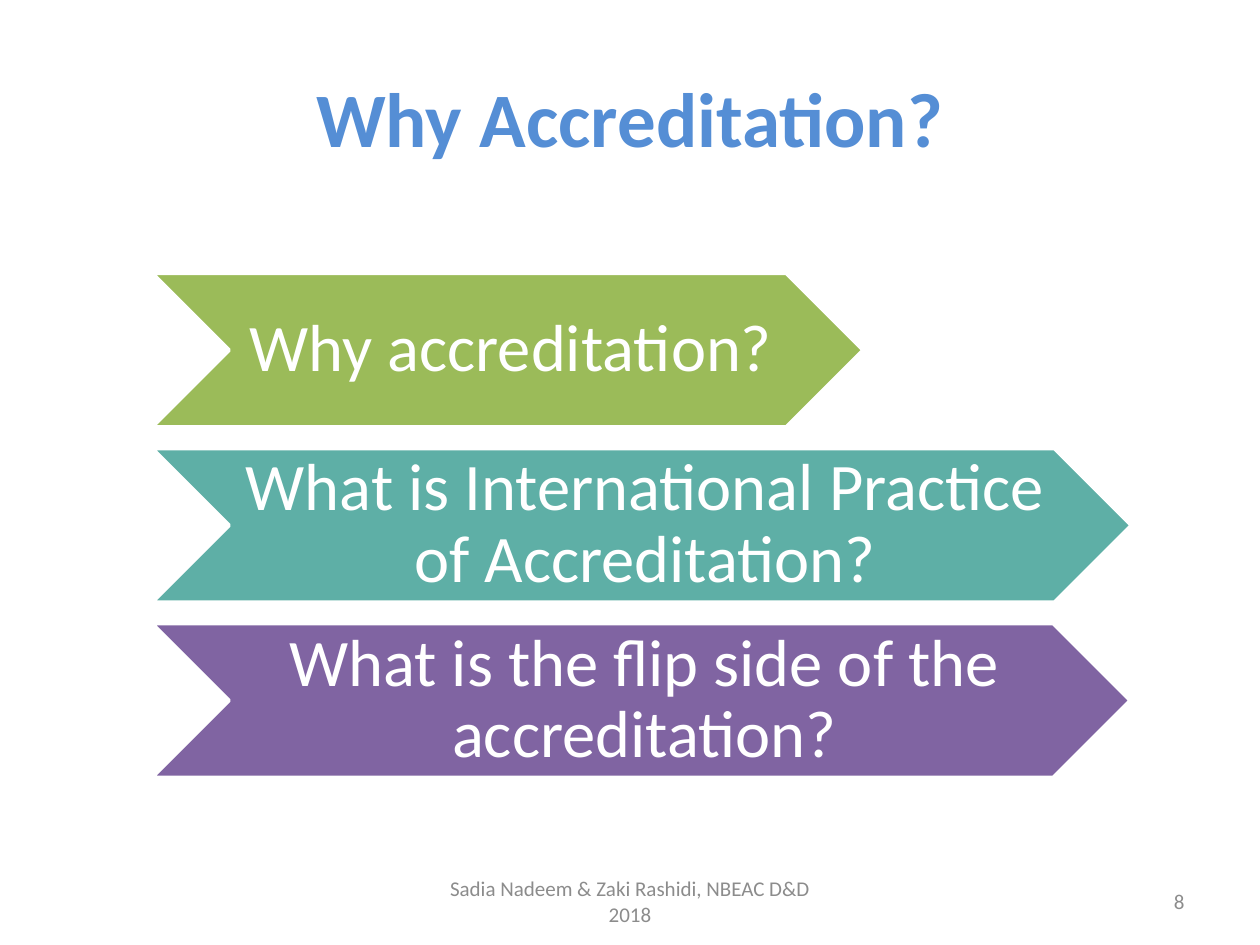
import pptx
import pptx.dml.color
import pptx.enum.shapes
import pptx.enum.text
import pptx.util

Pt = pptx.util.Pt
RGBColor = pptx.dml.color.RGBColor
Align = pptx.enum.text.PP_ALIGN

WHITE = RGBColor(0xFF, 0xFF, 0xFF)
BLUE = RGBColor(0x55, 0x8E, 0xD5)
GREEN = RGBColor(0x9B, 0xBB, 0x59)
TEAL = RGBColor(0x5E, 0xAF, 0xA6)
PURPLE = RGBColor(0x80, 0x64, 0xA2)
GRAY = RGBColor(0x8C, 0x8C, 0x8C)

QUESTIONS = [
    ("Why accreditation?", GREEN, 406.1),
    ("What is International Practice of Accreditation?", TEAL, 559.4),
    ("What is the flip side of the accreditation?", PURPLE, 558.7),
]


def set_attributes(target, values):
    for name, value in values.items():
        setattr(target, name, value)


def add_text(slide, box, text, size, color, alignment=Align.CENTER,
             bold=False, line_spacing=None, insets=(7.2, 3.6, 7.2, 3.6)):
    frame = slide.shapes.add_textbox(*map(Pt, box)).text_frame
    left, top, right, bottom = map(Pt, insets)
    set_attributes(frame, {
        "word_wrap": True,
        "vertical_anchor": pptx.enum.text.MSO_ANCHOR.MIDDLE,
        "margin_left": left,
        "margin_top": top,
        "margin_right": right,
        "margin_bottom": bottom,
    })
    paragraph = frame.paragraphs[0]
    set_attributes(paragraph, {"alignment": alignment, "line_spacing": line_spacing})
    run = paragraph.add_run()
    run.text = text
    set_attributes(run.font, {"name": "Calibri", "size": Pt(size), "bold": bold})
    run.font.color.rgb = color


def add_chevron(slide, box, text, color):
    left, top, width, height = box
    shape = slide.shapes.add_shape(
        pptx.enum.shapes.MSO_SHAPE.CHEVRON, *map(Pt, box))
    shape.shadow.inherit = False
    shape.fill.solid()
    shape.fill.fore_color.rgb = color
    shape.line.color.rgb = WHITE
    shape.line.width = Pt(2)
    add_text(slide, (left + height / 2, top, width - height, height), text, 38,
             WHITE, line_spacing=0.9, insets=(3.6, 2.2, 0, 2.2))


def add_questions(slide, box):
    left, top, width, height = box
    pitch = 100.1
    chevron_height = height - pitch * (len(QUESTIONS) - 1)
    for index, (text, color, chevron_width) in enumerate(QUESTIONS):
        chevron_box = (left, top + index * pitch, min(chevron_width, width), chevron_height)
        add_chevron(slide, chevron_box, text, color)


def add_footer(slide, box):
    left, top, width, height = box
    add_text(slide, (left, top, 228, height),
             "Sadia Nadeem & Zaki Rashidi, NBEAC D&D 2018", 12, GRAY)
    number_width = 168
    add_text(slide, (left + width - number_width, top, number_width, height),
             "8", 12, GRAY, alignment=Align.RIGHT)


def main():
    presentation = pptx.Presentation()
    set_attributes(presentation, {"slide_width": Pt(720), "slide_height": Pt(540)})
    slide = presentation.slides.add_slide(presentation.slide_layouts[6])
    add_text(slide, (36, 21.6, 648, 90), "Why Accreditation?", 44, BLUE, bold=True)
    add_questions(slide, (87.1, 156.2, 560, 288))
    add_footer(slide, (246, 500.5, 438, 28.8))
    presentation.save("out.pptx")


if __name__ == "__main__":
    main()
